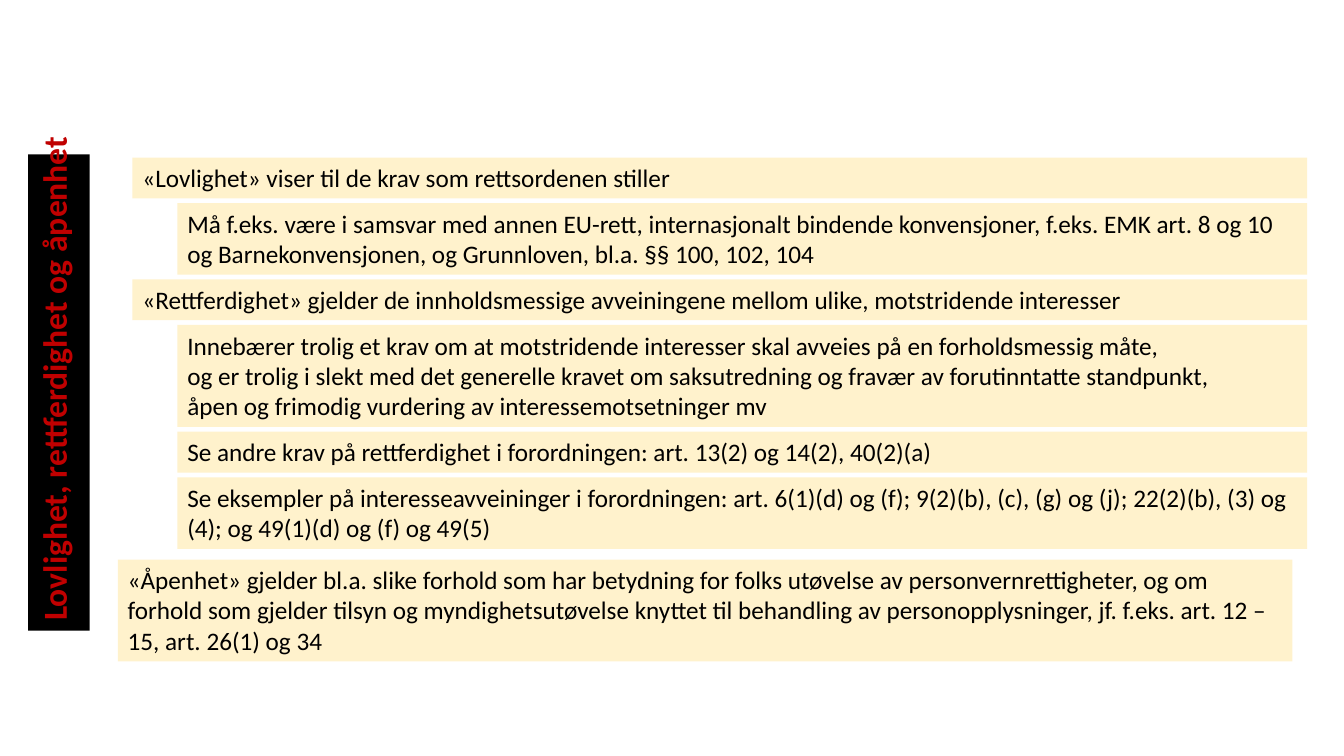
"""Build a slide on lawfulness, fairness and transparency."""
from pptx import Presentation
from pptx.dml.color import RGBColor
from pptx.enum.shapes import MSO_SHAPE
from pptx.enum.text import MSO_ANCHOR, MSO_AUTO_SIZE, PP_ALIGN
from pptx.util import Cm, Pt

RECT = MSO_SHAPE.RECTANGLE
TOP = MSO_ANCHOR.TOP
LEFT = PP_ALIGN.LEFT
GROW = MSO_AUTO_SIZE.SHAPE_TO_FIT_TEXT
BLACK = RGBColor(0x00, 0x00, 0x00)
RED = RGBColor(0xC0, 0x00, 0x00)
CREAM = RGBColor(0xFF, 0xF2, 0xCC)
FONT = "Calibri"
LINE = 0.77
PAD = 0.26
GAP = 0.12
INDENT = 1.13

TITLE = "Lovlighet, rettferdighet og åpenhet"
POINTS = [
    (0, 1, "«Lovlighet» viser til de krav som rettsordenen stiller"),
    (1, 2, "Må f.eks. være i samsvar med annen EU-rett, internasjonalt bindende "
           "konvensjoner, f.eks. EMK art. 8 og 10 og Barnekonvensjonen, og "
           "Grunnloven, bl.a. §§ 100, 102, 104"),
    (0, 1, "«Rettferdighet» gjelder de innholdsmessige avveiningene mellom ulike, "
           "motstridende interesser"),
    (1, 3, "Innebærer trolig et krav om at motstridende interesser skal avveies "
           "på en forholdsmessig måte,\n"
           "og er trolig i slekt med det generelle kravet om saksutredning og "
           "fravær av forutinntatte standpunkt,\n"
           "åpen og frimodig vurdering av interessemotsetninger mv"),
    (1, 1, "Se andre krav på rettferdighet i forordningen: art. 13(2) og 14(2), "
           "40(2)(a)"),
    (1, 2, "Se eksempler på interesseavveininger i forordningen: art. 6(1)(d) og "
           "(f); 9(2)(b), (c), (g) og (j); 22(2)(b), (3) og (4); og 49(1)(d) og "
           "(f) og 49(5)"),
]
OPEN = [
    (0, 3, "«Åpenhet» gjelder bl.a. slike forhold som har betydning for folks "
           "utøvelse av personvernrettigheter, og om\n"
           "forhold som gjelder tilsyn og myndighetsutøvelse knyttet til "
           "behandling av personopplysninger, jf. f.eks. art. 12 – 15, "
           "art. 26(1) og 34"),
]


def put_text(shape, text, size=18, color=BLACK, bold=False, wrap=True):
    """Fill a shape with text, one paragraph per line."""
    frame = shape.text_frame
    frame.word_wrap = wrap
    frame.auto_size = GROW
    frame.vertical_anchor = TOP
    frame.text = text
    for para in frame.paragraphs:
        para.alignment = LEFT
        font = para.runs[0].font
        font.name = FONT
        font.size = Pt(size)
        font.bold = bold
        font.color.rgb = color


def add_box(slide, left, top, width, height, fill):
    """Add a plain filled rectangle, measured in centimetres."""
    box = slide.shapes.add_shape(RECT, Cm(left), Cm(top), Cm(width), Cm(height))
    box.shadow.inherit = False
    box.fill.solid()
    box.fill.fore_color.rgb = fill
    box.line.fill.background()
    return box


def add_banner(slide, left, top, width, height):
    """Add the title banner, which reads from bottom to top."""
    box = add_box(slide, left, top, width, height, BLACK)
    box.rotation = 180
    put_text(box, TITLE, size=24, color=RED, bold=True, wrap=False)
    box.text_frame._txBody.bodyPr.set("vert", "eaVert")


def add_points(slide, points, left, top, width):
    """Stack the points downwards, indented by level."""
    for level, lines, text in points:
        shift = level * INDENT
        height = PAD + lines * LINE
        box = add_box(slide, left + shift, top, width - shift, height, CREAM)
        put_text(box, text)
        top += height + GAP


def main():
    """Build and save the slide."""
    deck = Presentation()
    deck.slide_width = Cm(33.87)
    deck.slide_height = Cm(19.05)
    slide = deck.slides.add_slide(deck.slide_layouts[6])
    add_banner(slide, 0.71, 3.89, 1.55, 12)
    add_points(slide, POINTS, 3.34, 3.97, 29.6)
    add_points(slide, OPEN, 2.97, 14.1, 29.6)
    deck.save("out.pptx")


if __name__ == "__main__":
    main()
